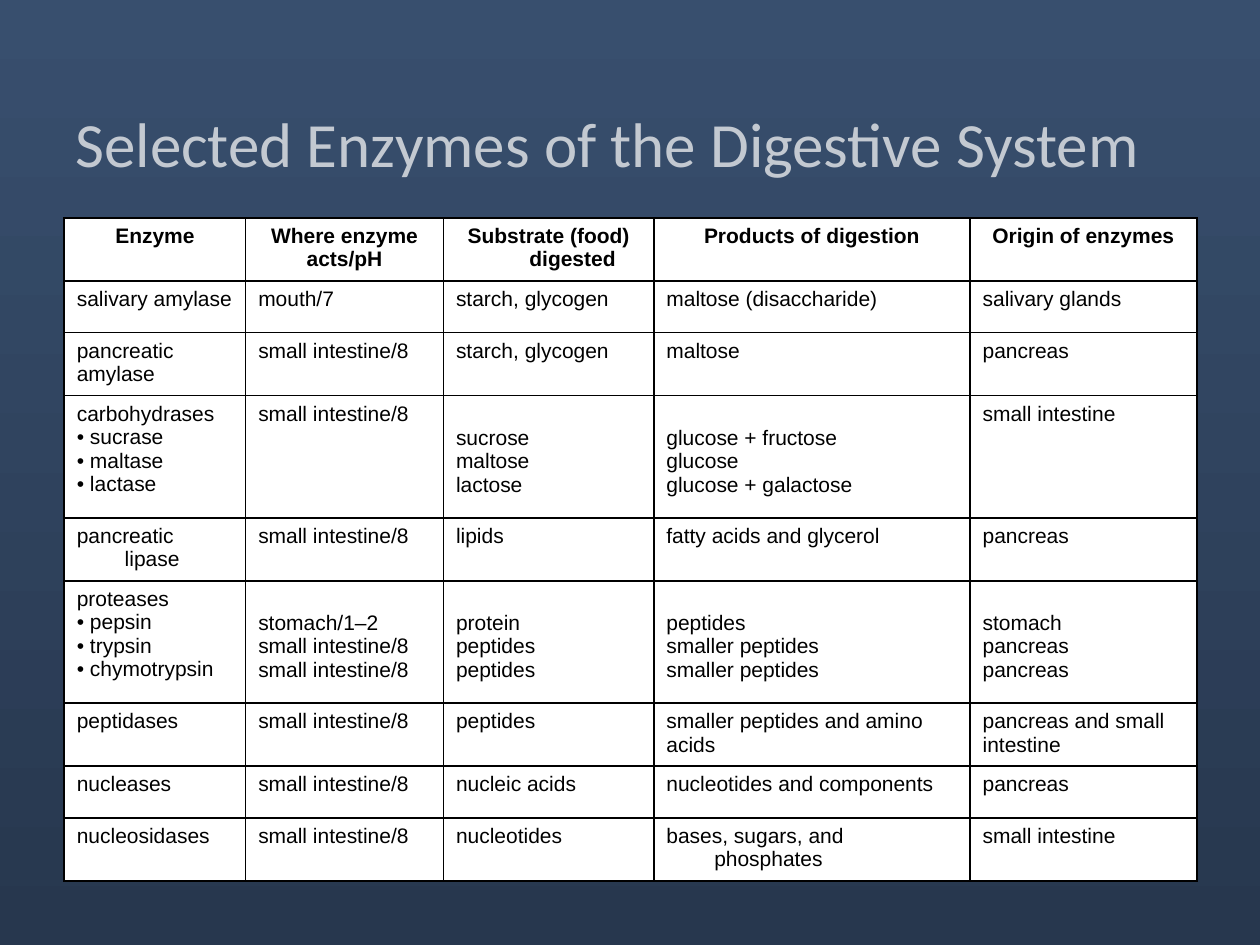
from lxml.etree import SubElement
from pptx import Presentation
from pptx.dml.color import RGBColor
from pptx.enum.text import MSO_ANCHOR as Anchor, PP_ALIGN as Align
from pptx.oxml import parse_xml
from pptx.oxml.ns import nsdecls, qn
from pptx.util import Inches, Pt

COLORS = {
    "sky": "384F6E",
    "deep": "27374E",
    "title": "C3C9D1",
    "cell": "FFFFFF",
    "ink": "000000",
}
COLUMN_WIDTHS = [1.44, 1.57, 1.67, 2.51, 1.8]
ROW_HEIGHT = 0.41
GROUP_HEIGHT = 0.97
HANGING = 0.38
LOWERED_TOP = 0.24
FLUSH = {
    "Where enzyme acts/pH",
    "pancreatic amylase",
    "smaller peptides and amino acids",
    "pancreas and small intestine",
}
ENZYMES = [
    ["Enzyme", "Where enzyme acts/pH", "Substrate (food) digested",
     "Products of digestion", "Origin of enzymes"],
    ["salivary amylase", "mouth/7", "starch, glycogen",
     "maltose (disaccharide)", "salivary glands"],
    ["pancreatic amylase", "small intestine/8", "starch, glycogen",
     "maltose", "pancreas"],
    ["carbohydrases\n• sucrase\n• maltase\n• lactase", "small intestine/8",
     "sucrose\nmaltose\nlactose",
     "glucose + fructose\nglucose\nglucose + galactose", "small intestine"],
    ["pancreatic lipase", "small intestine/8", "lipids",
     "fatty acids and glycerol", "pancreas"],
    ["proteases\n• pepsin\n• trypsin\n• chymotrypsin",
     "stomach/1–2\nsmall intestine/8\nsmall intestine/8",
     "protein\npeptides\npeptides",
     "peptides\nsmaller peptides\nsmaller peptides",
     "stomach\npancreas\npancreas"],
    ["peptidases", "small intestine/8", "peptides",
     "smaller peptides and amino acids", "pancreas and small intestine"],
    ["nucleases", "small intestine/8", "nucleic acids",
     "nucleotides and components", "pancreas"],
    ["nucleosidases", "small intestine/8", "nucleotides",
     "bases, sugars, and phosphates", "small intestine"],
]


def rgb(name):
    return RGBColor.from_string(COLORS[name])


def write_text(frame, text, *, font, size, color, bold=False,
               align=Align.LEFT, hanging=0):
    frame.word_wrap = True
    for index, line in enumerate(text.split("\n")):
        para = frame.add_paragraph() if index else frame.paragraphs[0]
        para.alignment = align
        if hanging:
            properties = para._p.get_or_add_pPr()
            properties.set("marL", str(Inches(hanging)))
            properties.set("indent", str(-Inches(hanging)))
        span = para.add_run()
        span.text = line
        span.font.name = font
        span.font.size = Pt(size)
        span.font.bold = bold
        span.font.color.rgb = rgb(color)


class SlideBuilder:
    title_style = {"font": "Calibri", "size": 36, "color": "title"}
    cell_style = {"font": "Arial", "size": 12, "color": "ink"}

    def __init__(self, page):
        self.page = page

    def background(self, top, bottom):
        fill = self.page.background.fill
        fill.gradient()
        fill.gradient_angle = 270
        for stop, name in zip(fill.gradient_stops, (top, bottom)):
            stop.color.rgb = rgb(name)

    def title(self, text, left, top, width, height):
        box = self.page.shapes.add_textbox(
            Inches(left), Inches(top), Inches(width), Inches(height))
        box.text_frame.vertical_anchor = Anchor.BOTTOM
        write_text(box.text_frame, text, **self.title_style)

    def borders(self, cell):
        properties = cell._tc.get_or_add_tcPr()
        for index, side in enumerate(("lnL", "lnR", "lnT", "lnB")):
            line = parse_xml(f'<a:{side} {nsdecls("a")} w="{Pt(1)}"/>')
            solid = SubElement(line, qn("a:solidFill"))
            SubElement(solid, qn("a:srgbClr"), val=COLORS["ink"])
            properties.insert(index, line)

    def table(self, rows, left, top):
        heights = [GROUP_HEIGHT if "\n" in row[0] else ROW_HEIGHT for row in rows]
        table = self.page.shapes.add_table(
            len(rows), len(COLUMN_WIDTHS), Inches(left), Inches(top),
            Inches(sum(COLUMN_WIDTHS)), Inches(sum(heights))).table
        table.first_row = table.horz_banding = False
        for column, width in zip(table.columns, COLUMN_WIDTHS):
            column.width = Inches(width)
        for row_index, row in enumerate(rows):
            table.rows[row_index].height = Inches(heights[row_index])
            header = row_index == 0
            for column_index, text in enumerate(row):
                cell = table.cell(row_index, column_index)
                cell.fill.solid()
                cell.fill.fore_color.rgb = rgb("cell")
                if column_index and "\n" in text:
                    cell.margin_top = Inches(LOWERED_TOP)
                write_text(cell.text_frame, text, bold=header,
                           align=Align.CENTER if header else Align.LEFT,
                           hanging=0 if text in FLUSH else HANGING,
                           **self.cell_style)
                self.borders(cell)


def main():
    deck = Presentation()
    deck.slide_width, deck.slide_height = Inches(10), Inches(7.5)
    slide = SlideBuilder(deck.slides.add_slide(deck.slide_layouts[6]))
    slide.background("sky", "deep")
    slide.title("Selected Enzymes of the Digestive System", 0.5, 0.3, 9, 1.18)
    slide.table(ENZYMES, 0.51, 1.73)
    deck.save("out.pptx")


if __name__ == "__main__":
    main()
